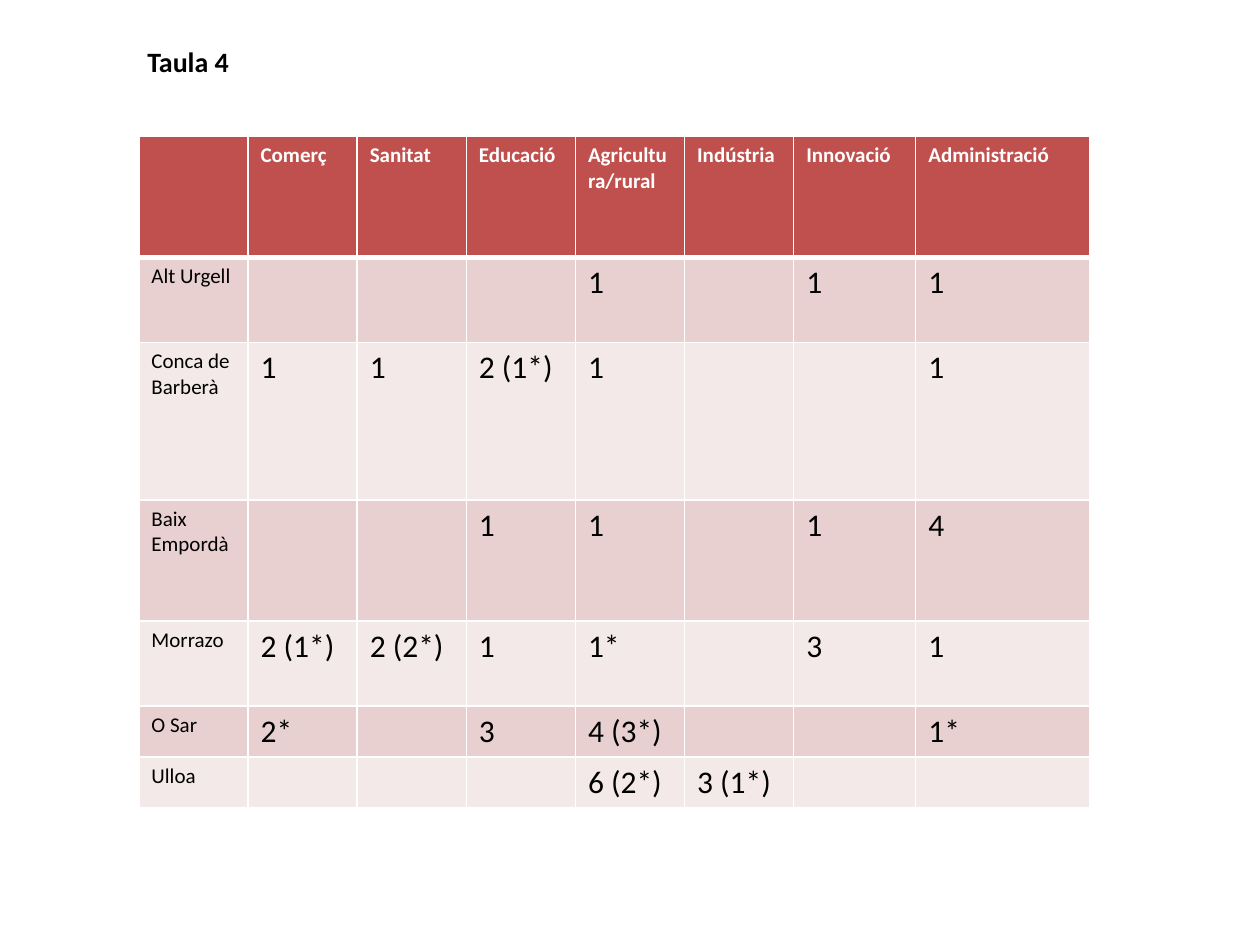
from lxml import etree
from pptx import Presentation
from pptx import util as u
from pptx.dml.color import RGBColor
from pptx.enum import text
from pptx.oxml.ns import qn

FONT = "Calibri"
WHITE, BLACK = "FFFFFF", "000000"
HEADER_FILL = "C0504D"
BAND_FILLS = ("F4E9E9", "E8D0D0")  # even rows, odd rows

COLUMN_WIDTHS = [2.2] * 6 + [2.46, 3.5]
ROW_HEIGHTS = [2.44, 1.71, 3.18, 2.44, 1.71, 1.02, 1.02]
ROWS = [
    ["", "Comerç", "Sanitat", "Educació", "Agricultura/rural",
     "Indústria", "Innovació", "Administració"],
    ["Alt Urgell", "", "", "", "1", "", "1", "1"],
    ["Conca de\nBarberà", "1", "1", "2 (1*)", "1", "", "", "1"],
    ["Baix Empordà", "", "", "1", "1", "", "1", "4"],
    ["Morrazo", "2 (1*)", "2 (2*)", "1", "1*", "", "3", "1"],
    ["O Sar", "2*", "", "3", "4 (3*)", "", "", "1*"],
    ["Ulloa", "", "", "", "6 (2*)", "3 (1*)", "", ""],
]


def rgb(value):
    return RGBColor.from_string(value)


def style_text(frame, size, color, bold):
    for paragraph in frame.paragraphs:
        font = paragraph.font
        font.name, font.size, font.bold = FONT, u.Pt(size), bold
        font.color.rgb = rgb(color)


def add_border(cell, side, points):
    line = etree.SubElement(cell._tc.get_or_add_tcPr(), qn(f"a:ln{side}"),
                            w=str(u.Pt(points)))
    fill = etree.SubElement(line, qn("a:solidFill"))
    etree.SubElement(fill, qn("a:srgbClr"), val=WHITE)


def fill_cell(cell, content, row, column):
    header = row == 0
    cell.text = content
    style_text(cell.text_frame, 12 if header or column == 0 else 18,
               WHITE if header else BLACK, header)
    # Borders come before the fill in the cell properties
    for side in "LRTB":
        under_header = (row, side) in ((0, "B"), (1, "T"))
        add_border(cell, side, 3 if under_header else 1)
    cell.fill.solid()
    cell.fill.fore_color.rgb = rgb(HEADER_FILL if header
                                   else BAND_FILLS[row % 2])


def add_title(slide):
    title = slide.shapes.add_textbox(u.Cm(2.72), 0, u.Cm(19.23), u.Cm(1.7))
    frame = title.text_frame
    frame.word_wrap = True
    frame.vertical_anchor = text.MSO_ANCHOR.BOTTOM
    frame.text = "Taula 4"
    frame.paragraphs[0].alignment = text.PP_ALIGN.JUSTIFY
    style_text(frame, 16, BLACK, True)


def add_sector_table(slide):
    table = slide.shapes.add_table(
        len(ROWS), len(COLUMN_WIDTHS), u.Cm(2.8), u.Cm(2.75),
        u.Cm(sum(COLUMN_WIDTHS)), u.Cm(sum(ROW_HEIGHTS))).table
    for column, width in zip(table.columns, COLUMN_WIDTHS):
        column.width = u.Cm(width)
    for row, height in zip(table.rows, ROW_HEIGHTS):
        row.height = u.Cm(height)
    for r, contents in enumerate(ROWS):
        for c, content in enumerate(contents):
            fill_cell(table.cell(r, c), content, r, c)


def main():
    deck = Presentation()
    deck.slide_width, deck.slide_height = u.Cm(25.4), u.Cm(19.05)
    slide = deck.slides.add_slide(deck.slide_layouts[6])
    # Table of regions by sector
    add_sector_table(slide)
    # Heading above the table
    add_title(slide)
    deck.save("out.pptx")


if __name__ == "__main__":
    main()
